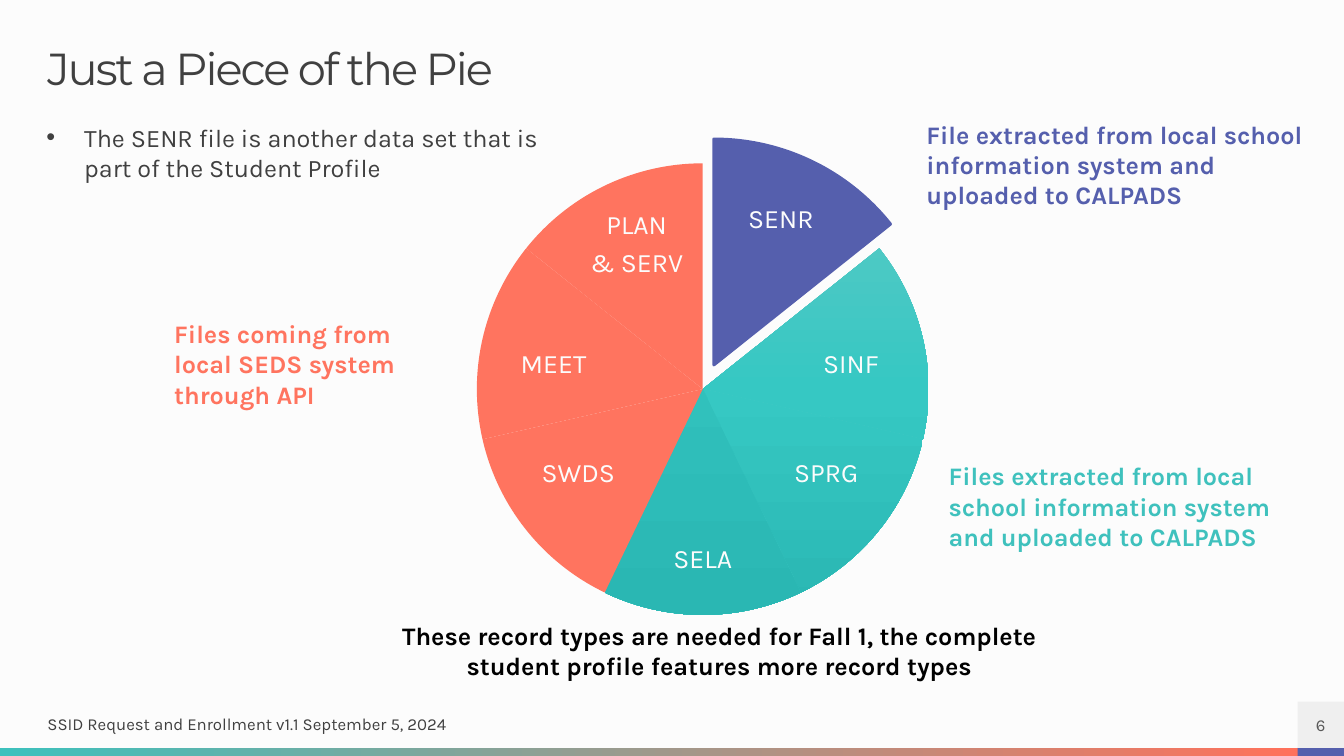
from dataclasses import dataclass

from pptx import Presentation, oxml, util as u
from pptx.dml.color import RGBColor
from pptx.enum import shapes, text
from pptx.oxml import ns


@dataclass(frozen=True)
class Theme:
    """Colours, fonts and type sizes of the deck."""
    paper: str = "FCFCFC"
    ink: str = "404040"
    black: str = "000000"
    indigo: str = "555FAD"
    coral: str = "FF745F"
    bar_coral: str = "FF715B"
    teal: str = "3FC1BD"
    bar_teal: str = "3DC1BD"
    teal_light: str = "5CC9C5"
    teal_mid: str = "36C8C3"
    teal_dark: str = "2AB7B3"
    badge: str = "EFEFEF"
    badge_ink: str = "595959"
    heading_font: str = "Montserrat"
    text_font: str = "Karla"
    title_size: int = 32
    label_size: int = 19
    body_size: int = 18
    small_size: int = 12


class Slide:
    """Draws themed elements on one slide."""

    def __init__(self, deck, theme):
        """Add a title-and-content page with the theme background."""
        self.theme = theme
        self.page = deck.slides.add_slide(deck.slide_layouts[1])
        fill = self.page.background.fill
        fill.solid()
        fill.fore_color.rgb = RGBColor.from_string(theme.paper)

    def place(self, shape, frame):
        """Move a shape to left, top, width and height in inches."""
        shape.left, shape.top, shape.width, shape.height = map(u.Inches, frame)

    def set_text(self, shape, lines, size, color, font=None, bold=False, align="LEFT",
                 anchor="TOP", inset=0, spacing=None, after=0):
        """Fill a shape with one formatted paragraph per line."""
        box = shape.text_frame
        box.word_wrap = True
        box.auto_size = text.MSO_AUTO_SIZE.NONE
        box.vertical_anchor = text.MSO_ANCHOR[anchor]
        if inset is not None:
            box.margin_left = box.margin_right = u.Inches(inset)
            box.margin_top = box.margin_bottom = u.Inches(inset)
        box.text = lines
        for para in box.paragraphs:
            para.alignment = text.PP_ALIGN[align]
            para.line_spacing = spacing
            para.space_before = u.Pt(0)
            para.space_after = u.Pt(after)
            para.font.name = font or self.theme.text_font
            para.font.size = u.Pt(size)
            para.font.bold = bold
            para.font.color.rgb = RGBColor.from_string(color)
        return box

    def title(self, words, frame):
        """Set the page title with tightened letters."""
        shape = self.page.shapes.title
        self.place(shape, frame)
        box = self.set_text(shape, words, self.theme.title_size, self.theme.ink,
                            self.theme.heading_font, anchor="MIDDLE", spacing=0.9)
        for span in box.paragraphs[0].runs:
            span.font._element.set("spc", "-150")

    def body(self, words, frame):
        """Set the introduction without a bullet."""
        shape = self.page.placeholders[1]
        self.place(shape, frame)
        props = shape.text_frame.paragraphs[0]._p.get_or_add_pPr()
        props.set("marL", "0")
        props.set("indent", "0")
        props.append(oxml.parse_xml(f"<a:buNone {ns.nsdecls('a')}/>"))
        self.set_text(shape, words, self.theme.body_size, self.theme.ink)

    def textbox(self, words, frame, size, color, **style):
        """Add a formatted text box."""
        shape = self.page.shapes.add_textbox(*map(u.Inches, frame))
        self.set_text(shape, words, size, color, **style)

    def shape(self, kind, frame, color=None, gradient=None, angle=0):
        """Add a flat or gradient shape without outline or shadow."""
        shape = self.page.shapes.add_shape(kind, *map(u.Inches, frame))
        shape.shadow.inherit = False
        shape.line.fill.background()
        if gradient:
            stops = "".join(f'<a:gs pos="{percent * 1000}"><a:srgbClr val="{tone}"/></a:gs>'
                            for percent, tone in gradient)
            fill = oxml.parse_xml(f"<a:gradFill {ns.nsdecls('a')} rotWithShape=\"1\"><a:gsLst>{stops}"
                                  f'</a:gsLst><a:lin ang="{angle * 60000}" scaled="0"/></a:gradFill>')
            shape._element.spPr.find(ns.qn("a:prstGeom")).addnext(fill)
        else:
            shape.fill.solid()
            shape.fill.fore_color.rgb = RGBColor.from_string(color)
        return shape

    def slice(self, index, count, frame, **paint):
        """Add one of several equal pie slices, clockwise from the top."""
        shape = self.shape(shapes.MSO_SHAPE.PIE, frame, **paint)
        for side in (0, 1):
            degrees = (270 + 360 * (index + side) / count) % 360
            shape.adjustments[side] = degrees * 0.6
        return shape


theme = Theme()
deck = Presentation()
deck.slide_width, deck.slide_height = u.Inches(13.33), u.Inches(7.5)
slide = Slide(deck, theme)

RECT = shapes.MSO_SHAPE.RECTANGLE
slide.shape(RECT, (0, 7.42, 12.87, 0.08),
            gradient=[(0, theme.bar_teal), (100, theme.bar_coral)])
slide.shape(RECT, (12.87, 7.42, 0.46, 0.08), theme.indigo)
slide.title("Just a Piece of the Pie", (0.47, 0.47, 12.4, 0.47))
slide.body("The SENR file is another data set that is part of the Student Profile",
           (0.46, 1.21, 4.92, 0.8))


def teal_blend(middle):
    """Return the teal gradient with its middle stop at a percentage."""
    stops = [(0, theme.teal_light), (middle, theme.teal_mid), (100, theme.teal_dark)]
    return {"gradient": stops, "angle": 90}


coral = {"color": theme.coral}
slices = [
    ("SENR", (7.13, 1.8, 1.23, 0.77), {"color": theme.indigo}),
    ("SINF", (7.79, 3.21, 1.3, 0.83), teal_blend(50)),
    ("SPRG", (7.61, 4.28, 1.17, 0.85), teal_blend(50)),
    ("SELA", (6.37, 5.13, 1.2, 0.85), teal_blend(17)),
    ("SWDS", (5.15, 4.28, 1.17, 0.85), coral),
    ("MEET", (4.84, 3.21, 1.3, 0.83), coral),
    ("PLAN\n& SERV", (5.7, 2.04, 1.23, 0.77), coral),
]
PIE_FRAME = (4.73, 1.62, 4.48, 4.48)
PULLED_FRAME = (4.84, 1.38, 4.48, 4.48)
for index, (label, frame, paint) in enumerate(slices):
    pulled = index == 0
    piece = slide.slice(index, len(slices), PULLED_FRAME if pulled else PIE_FRAME, **paint)
    if pulled:
        piece.line.color.rgb = RGBColor.from_string(theme.indigo)
        piece.line.width = u.Pt(2.25)
    slide.textbox(label, frame, theme.label_size, theme.paper, align="CENTER",
                  anchor="MIDDLE", inset=0.03, spacing=0.9, after=6.65)

notes = [
    ("Files coming from local SEDS system through API",
     (1.63, 3.11, 2.53, 1.01), theme.coral, "LEFT"),
    ("Files extracted from local school information system and uploaded to CALPADS",
     (9.31, 4.52, 3.52, 1.01), theme.teal, "LEFT"),
    ("File extracted from local school information system and uploaded to CALPADS",
     (9.09, 1.13, 3.96, 1.01), theme.indigo, "LEFT"),
    ("These record types are needed for Fall 1, the complete student profile "
     "features more record types", (3.71, 6.1, 6.85, 0.71), theme.black, "CENTER"),
]
for words, frame, color, align in notes:
    slide.textbox(words, frame, theme.body_size, color, bold=True, align=align, inset=None)

badge = slide.shape(RECT, (12.87, 6.96, 0.46, 0.46), theme.badge)
slide.set_text(badge, "6", theme.small_size, theme.badge_ink, align="CENTER", anchor="MIDDLE")
slide.textbox("SSID Request and Enrollment v1.1 September 5, 2024", (0.47, 6.96, 5.98, 0.45),
              theme.small_size, theme.ink, anchor="MIDDLE")

deck.save("out.pptx")
